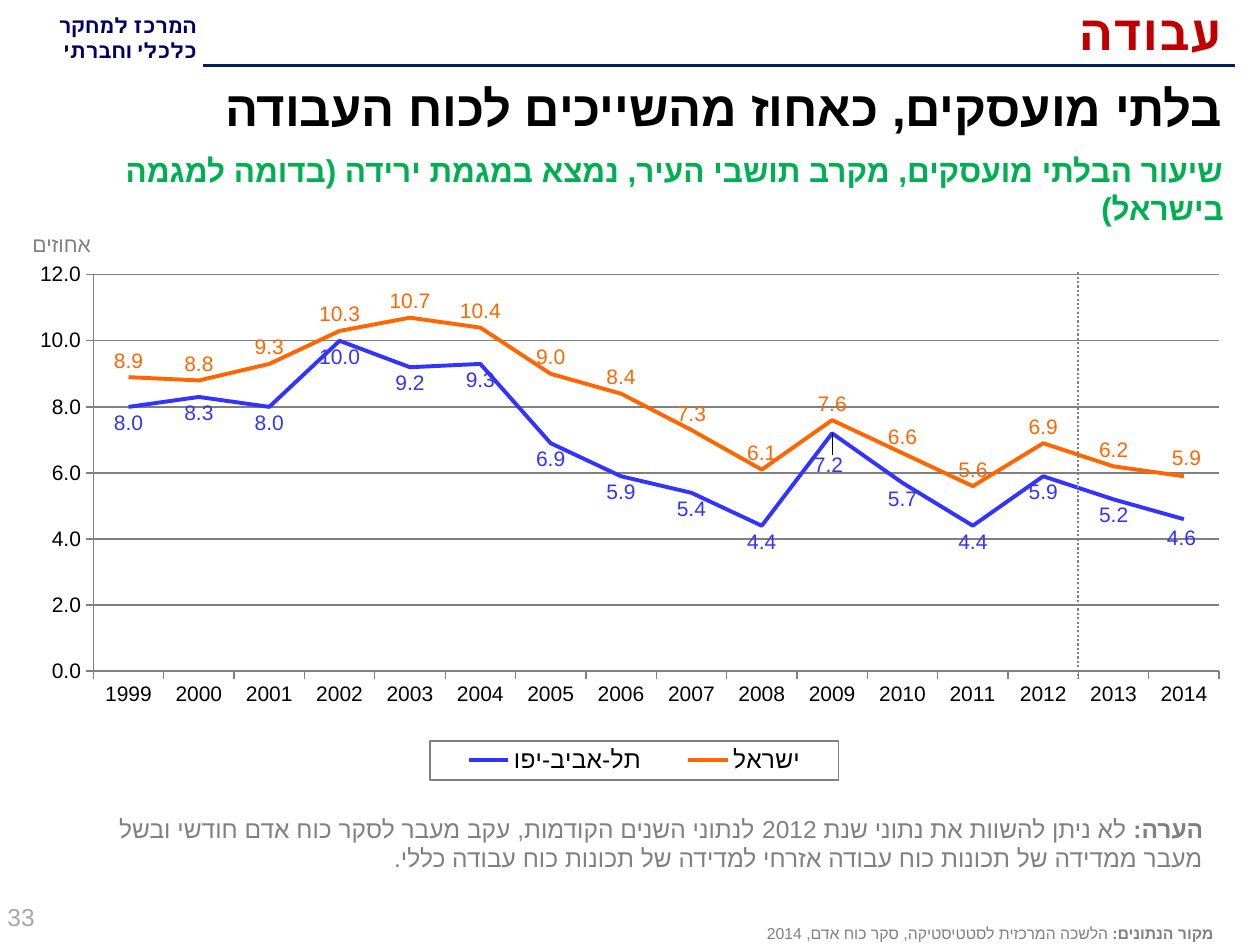
from lxml import etree
from pptx import Presentation
from pptx.chart.data import CategoryChartData
from pptx.dml.color import RGBColor
from pptx.enum.chart import XL_CHART_TYPE, XL_LABEL_POSITION, XL_LEGEND_POSITION, XL_TICK_MARK
from pptx.enum.dml import MSO_LINE
from pptx.enum.shapes import MSO_CONNECTOR
from pptx.enum.text import MSO_ANCHOR, MSO_AUTO_SIZE, PP_ALIGN
from pptx.oxml import parse_xml
from pptx.oxml.ns import nsdecls, qn
from pptx.util import Cm, Pt

TOP, MIDDLE = MSO_ANCHOR.TOP, MSO_ANCHOR.MIDDLE
LEFT, CENTER, RIGHT = PP_ALIGN.LEFT, PP_ALIGN.CENTER, PP_ALIGN.RIGHT
ABOVE, BELOW = XL_LABEL_POSITION.ABOVE, XL_LABEL_POSITION.BELOW
OUTSIDE = XL_TICK_MARK.OUTSIDE
COLORS = {
    "navy": "002060", "center": "000066", "red": "BF0000", "green": "00B050",
    "black": "000000", "gray": "808080", "light": "A6A6A6",
    "city": "3333FF", "country": "FF6600",
}
RGB = {name: RGBColor.from_string(value) for name, value in COLORS.items()}


def write(box, place, paragraphs, size, color, font="Arial", align=RIGHT, anchor=TOP):
    """Place a box and fill it with right-to-left paragraphs of (text, bold) spans."""
    box.left, box.top, box.width, box.height = [Cm(value) for value in place]
    frame = box.text_frame
    frame.word_wrap = True
    frame.auto_size = MSO_AUTO_SIZE.NONE
    frame.vertical_anchor = anchor
    for index, spans in enumerate(paragraphs):
        para = frame.add_paragraph() if index else frame.paragraphs[0]
        para.alignment = align
        para._p.get_or_add_pPr().set("rtl", "1")
        for text, bold in spans:
            span = para.add_run()
            span.text = text
            span.font.size = Pt(size)
            span.font.bold = bold
            span.font.color.rgb = RGB[color]
            span.font.name = font
            etree.SubElement(span.font._element, qn("a:cs")).set("typeface", font)


def manual_layout(**values):
    """Return a chart layout element with the given settings."""
    layout = parse_xml(f"<c:layout {nsdecls('c')}><c:manualLayout/></c:layout>")
    for name, value in values.items():
        etree.SubElement(layout[0], qn(f"c:{name}")).set("val", str(value))
    return layout


deck = Presentation()
deck.slide_width, deck.slide_height = Cm(25.4), Cm(19.05)
page = deck.slides.add_slide(deck.slide_layouts[5])

# Title
write(page.shapes.title, (4.01, -0.08, 20.88, 1.4), [[("עבודה", True)]],
      28, "red", "Roboto", anchor=MIDDLE)

# Chart
chart_data = CategoryChartData(number_format="0.0")
chart_data.categories = [str(year) for year in range(1999, 2015)]
chart_data.add_series("תל-אביב-יפו", (8, 8.3, 8, 10, 9.2, 9.3, 6.9, 5.9, 5.4, 4.4,
                                     7.2, 5.7, 4.4, 5.9, 5.2, 4.6))
chart_data.add_series("ישראל", (8.9, 8.8, 9.3, 10.3, 10.7, 10.4, 9, 8.4, 7.3, 6.1,
                                7.6, 6.6, 5.6, 6.9, 6.2, 5.9))
chart = page.shapes.add_chart(XL_CHART_TYPE.LINE, Cm(0.46), Cm(5.13), Cm(24.51),
                              Cm(10.8), chart_data).chart
chart.has_title = False
chart.font.name = "Arial"
chart.font.size = Pt(14)
chart.font.color.rgb = RGB["black"]
plot_area = chart._chartSpace.chart.plotArea
for old_layout in plot_area.findall(qn("c:layout")):
    plot_area.remove(old_layout)
plot_area.insert(0, manual_layout(layoutTarget="inner", xMode="edge", yMode="edge",
                                  x=0.058, y=0.038, w=0.926, h=0.74))

# Axes
value_axis = chart.value_axis
value_axis.minimum_scale, value_axis.maximum_scale, value_axis.major_unit = 0, 12, 2
value_axis.tick_labels.number_format = "0.0"
value_axis.tick_labels.number_format_is_linked = False
value_axis.has_major_gridlines = True
for axis in (chart.category_axis, value_axis):
    axis.major_tick_mark = OUTSIDE
    axis.tick_labels.font.size = Pt(12)
for part in (chart.category_axis, value_axis, value_axis.major_gridlines):
    part.format.line.color.rgb = RGB["gray"]
    part.format.line.width = Pt(0.75)

# Lines and labels, with small shifts for crowded points
series_styles = [
    ("city", BELOW, {10: (-0.003, 0.03), 15: (-0.002, 0.006)}),
    ("country", ABOVE, {15: (0.002, -0.003)}),
]
for series, (color, position, shifts) in zip(chart.plots[0].series, series_styles):
    series.smooth = False
    series.format.line.color.rgb = RGB[color]
    series.format.line.width = Pt(2.25)
    labels = series.data_labels
    labels.show_value = True
    labels.number_format = "0.0"
    labels.number_format_is_linked = False
    for index in shifts:
        series.points[index].data_label.position = position
    for label in [labels] + [series.points[index].data_label for index in shifts]:
        label.position = position
        label.font.size = Pt(12)
        label.font.color.rgb = RGB[color]
    for index, (x, y) in shifts.items():
        label = series._element.xpath(f'.//c:dLbl[c:idx/@val="{index}"]')[0]
        label.insert(1, manual_layout(x=x, y=y))

# Legend
chart.has_legend = True
legend = chart.legend
legend.position = XL_LEGEND_POSITION.BOTTOM
legend.include_in_layout = False
legend.font.size = Pt(14)
legend.font.name = "Arial"
etree.SubElement(legend.font._element, qn("a:cs")).set("typeface", "Arial")
for old_layout in legend._element.findall(qn("c:layout")):
    legend._element.remove(old_layout)
legend._element.find(qn("c:legendPos")).addnext(
    manual_layout(xMode="edge", yMode="edge", x=0.335, y=0.908, w=0.336, h=0.073))
legend._element.find(qn("c:txPr")).addprevious(parse_xml(
    f'<c:spPr {nsdecls("c", "a")}><a:ln w="9525"><a:solidFill>'
    f'<a:srgbClr val="{COLORS["gray"]}"/></a:solidFill></a:ln></c:spPr>'))

# Header rule and break between surveys
rules = [
    ((24.89, 1.32, 4.09, 1.32), "navy", 2.25, None),
    ((21.74, 5.49, 21.74, 13.69), "gray", 1.25, MSO_LINE.ROUND_DOT),
]
for ends, color, width, dash in rules:
    rule = page.shapes.add_connector(MSO_CONNECTOR.STRAIGHT, *[Cm(end) for end in ends])
    rule.line.color.rgb = RGB[color]
    rule.line.width = Pt(width)
    if dash:
        rule.line.dash_style = dash
    etree.SubElement(rule._element.spPr, qn("a:effectLst"))

# Texts: place, paragraphs, size, colour, font, alignment, anchor
texts = [
    ((-0.38, 0.13, 4.6, 1.3), [[("המרכז למחקר", True)], [("כלכלי וחברתי", True)]],
     12, "center", "Roboto", RIGHT, TOP),
    ((0.23, 1.4, 24.66, 1.52), [[("בלתי מועסקים, כאחוז מהשייכים לכוח העבודה", True)]],
     28, "black", "Arial", RIGHT, MIDDLE),
    ((0.71, 2.92, 24.21, 1.57),
     [[("שיעור הבלתי מועסקים, מקרב תושבי העיר, נמצא במגמת ירידה "
        "(בדומה למגמה בישראל)", True)]],
     18, "green", "Arial", RIGHT, TOP),
    ((-0.71, 4.55, 3.91, 0.76), [[("אחוזים", False)]],
     12, "gray", "Arial", CENTER, TOP),
    ((2.11, 16.28, 22.4, 1.45),
     [[("הערה: ", True),
       ("לא ניתן להשוות את נתוני שנת 2012 לנתוני השנים הקודמות, עקב מעבר לסקר כוח אדם "
        "חודשי ובשל מעבר ממדידה של תכונות כוח עבודה אזרחי למדידה של תכונות כוח עבודה "
        "כללי.", False)]],
     14, "gray", "Arial", RIGHT, TOP),
    ((-0.1, 17.93, 5.92, 1.12), [[("33", False)]],
     14, "light", "Arial", LEFT, MIDDLE),
    ((7.11, 18.49, 17.6, 0.64),
     [[("מקור הנתונים: ", True),
       ("הלשכה המרכזית לסטטיסטיקה, סקר כוח אדם, 2014", False)]],
     9, "gray", "Arial", RIGHT, TOP),
]
for place, *style in texts:
    write(page.shapes.add_textbox(0, 0, 0, 0), place, *style)

deck.save("out.pptx")
